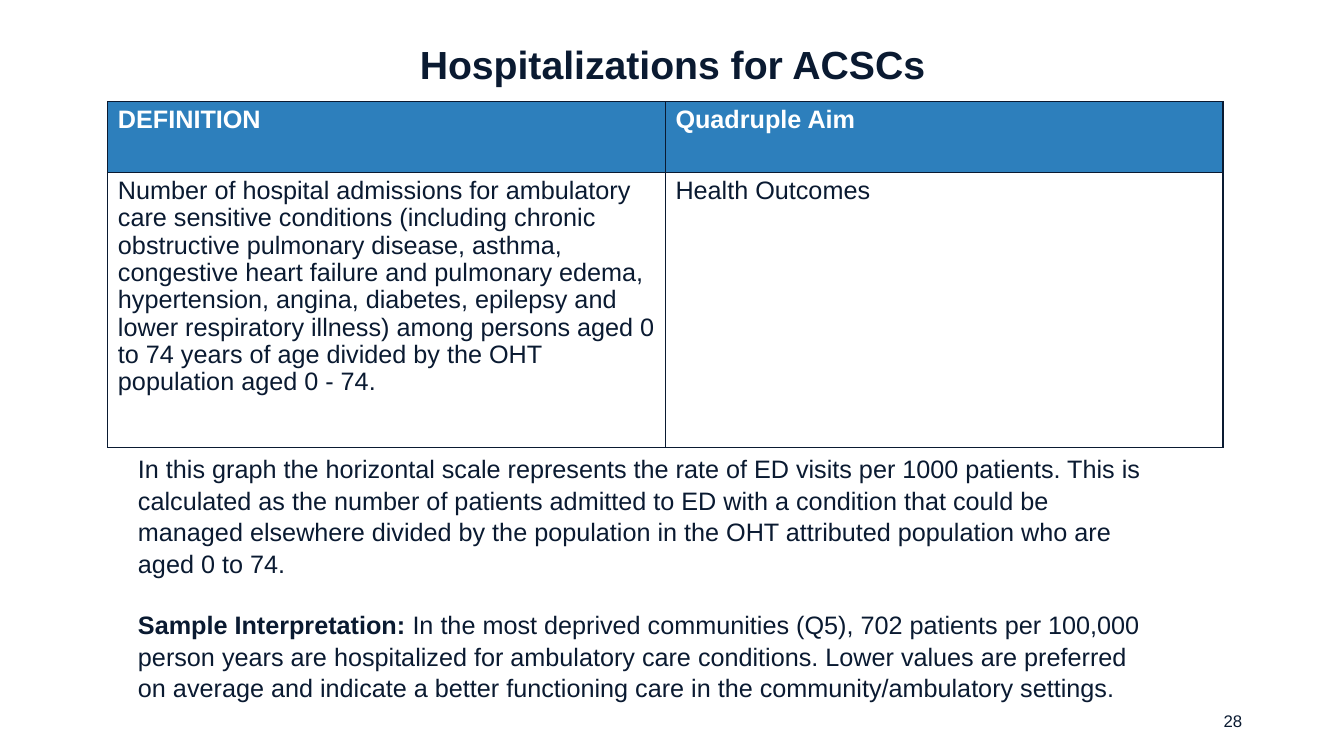
from dataclasses import dataclass

from lxml import etree
from pptx import Presentation
from pptx.dml.color import RGBColor
from pptx.enum.text import MSO_ANCHOR, PP_ALIGN
from pptx.oxml.ns import qn
from pptx.util import Inches, Pt

LEFT, CENTER, RIGHT = PP_ALIGN.LEFT, PP_ALIGN.CENTER, PP_ALIGN.RIGHT
TOP, MIDDLE = MSO_ANCHOR.TOP, MSO_ANCHOR.MIDDLE


@dataclass(frozen=True)
class Theme:
    """Colours, font and type sizes of the deck."""
    font: str = "Arial"
    ink: str = "0A1A31"
    paper: str = "FFFFFF"
    header: str = "2D7FBC"
    title_size: int = 28
    body_size: int = 18
    number_size: int = 12
    border: int = 1


THEME = Theme()

TITLE = "Hospitalizations for ACSCs"
DEFINITION_ROWS = [
    ("DEFINITION", "Quadruple Aim"),
    ("Number of hospital admissions for ambulatory care sensitive conditions "
     "(including chronic obstructive pulmonary disease, asthma, congestive heart failure "
     "and pulmonary edema, hypertension, angina, diabetes, epilepsy and lower respiratory "
     "illness) among persons aged 0 to 74 years of age divided by the OHT population "
     "aged 0 - 74.",
     "Health Outcomes"),
]
ROW_HEIGHTS = (0.7, 2.73)
EXPLANATION = [
    [("In this graph the horizontal scale represents the rate of ED visits per 1000 patients. "
      "This is calculated as the number of patients admitted to ED with a condition that could "
      "be managed elsewhere divided by the population in the OHT attributed population who "
      "are aged 0 to 74.", False)],
    [("Sample Interpretation: ", True),
     ("In the most deprived communities (Q5), 702 patients per 100,000 person years are "
      "hospitalized for ambulatory care conditions. Lower values are preferred on average and "
      "indicate a better functioning care in the community/ambulatory settings.", False)],
]


def add_span(para, text, size, bold=False, color=THEME.ink):
    """Append one styled run to a paragraph."""
    span = para.add_run()
    span.text = text
    span.font.name = THEME.font
    span.font.size = Pt(size)
    span.font.bold = bold
    span.font.color.rgb = RGBColor.from_string(color)


def add_text(page, box, paragraphs, size, align=LEFT, anchor=TOP, spacing=1.0, gap=0):
    """Place a text box holding paragraphs of (text, bold) runs."""
    frame = page.shapes.add_textbox(*map(Inches, box)).text_frame
    frame.word_wrap = True
    frame.vertical_anchor = anchor
    for index, spans in enumerate(paragraphs):
        para = frame.add_paragraph() if index else frame.paragraphs[0]
        para.alignment = align
        para.line_spacing = spacing
        if index:
            para.space_before = Pt(gap)
        for text, bold in spans:
            add_span(para, text, size, bold)


def outline_cell(cell):
    """Draw a solid border on all four sides of a cell."""
    properties = cell._tc.get_or_add_tcPr()
    for position, side in enumerate(("a:lnL", "a:lnR", "a:lnT", "a:lnB")):
        line = etree.Element(qn(side), w=str(Pt(THEME.border)))
        fill = etree.SubElement(line, qn("a:solidFill"))
        etree.SubElement(fill, qn("a:srgbClr"), val=THEME.ink)
        properties.insert(position, line)


def add_definition_table(page, box):
    """Place the definition table with a coloured header row."""
    table = page.shapes.add_table(
        len(DEFINITION_ROWS), len(DEFINITION_ROWS[0]), *map(Inches, box)).table
    for column in table.columns:
        column.width = Inches(box[2] / len(table.columns))
    for row, height, texts in zip(table.rows, ROW_HEIGHTS, DEFINITION_ROWS):
        row.height = Inches(height)
        is_header = texts is DEFINITION_ROWS[0]
        for cell, text in zip(row.cells, texts):
            cell.fill.solid()
            cell.fill.fore_color.rgb = RGBColor.from_string(
                THEME.header if is_header else THEME.paper)
            outline_cell(cell)
            para = cell.text_frame.paragraphs[0]
            para.line_spacing = 0.97
            add_span(para, text, THEME.body_size, is_header,
                     THEME.paper if is_header else THEME.ink)


def build_definition_page(deck):
    """Add the indicator definition slide."""
    page = deck.slides.add_slide(deck.slide_layouts[6])
    add_text(page, (9.42, 6.95, 3, 0.4), [[("28", False)]], THEME.number_size, RIGHT, MIDDLE)
    add_text(page, (0.77, 0.24, 11.8, 0.84), [[(TITLE, True)]], THEME.title_size,
             CENTER, MIDDLE, 0.9)
    add_definition_table(page, (1.07, 1.01, 11.06, sum(ROW_HEIGHTS)))
    add_text(page, (1.27, 4.44, 10.32, 2.52), EXPLANATION, THEME.body_size,
             spacing=1.04, gap=21.5)


def main():
    """Build and save the deck."""
    deck = Presentation()
    deck.slide_width, deck.slide_height = Inches(13.33), Inches(7.5)
    build_definition_page(deck)
    deck.save("out.pptx")


if __name__ == "__main__":
    main()
